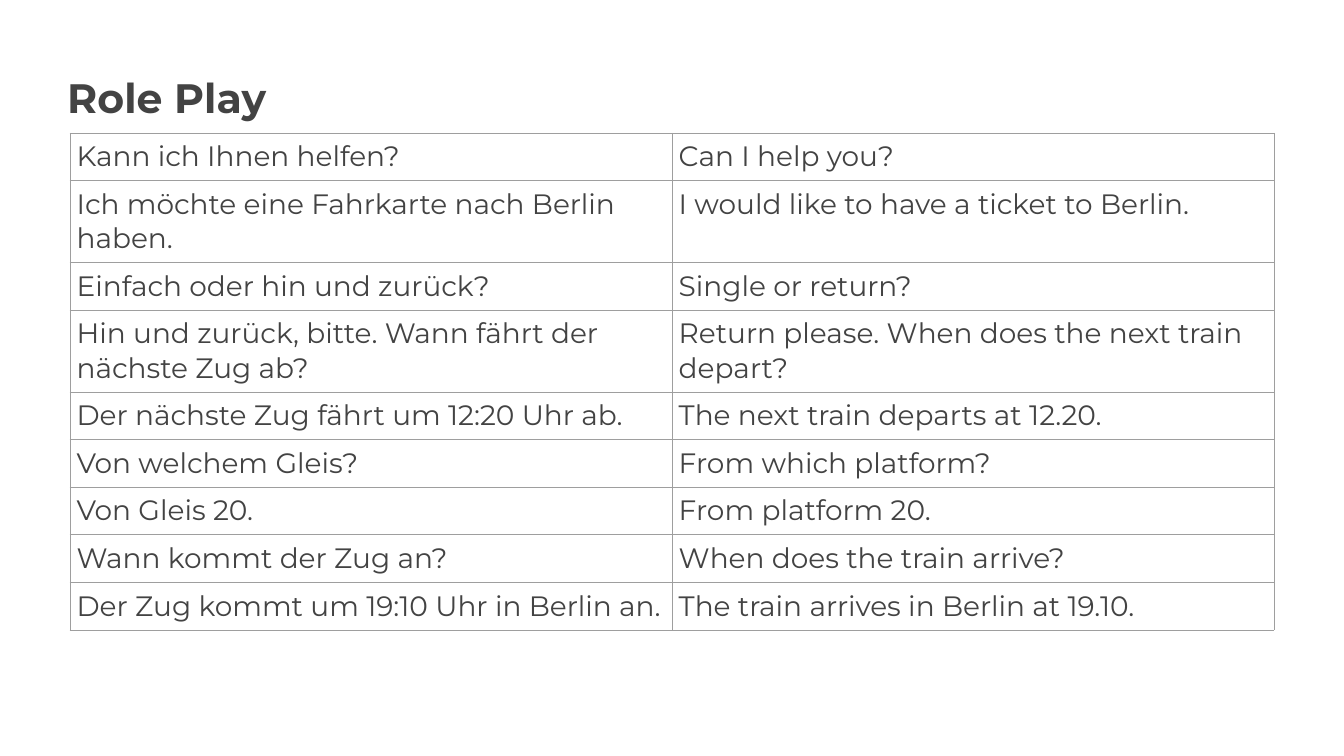
from dataclasses import dataclass

import pptx
import pptx.dml.color
import pptx.enum.text
import pptx.oxml
import pptx.oxml.ns
import pptx.util
from pptx.util import Inches


@dataclass(frozen=True)
class Theme:
    font: str = "Montserrat"
    text: str = "434343"
    border: str = "9E9E9E"
    title_size: int = 44
    cell_size: int = 30
    border_width: float = 0.75


THEME = Theme()

DIALOGUE = [
    ("Kann ich Ihnen helfen?", "Can I help you?"),
    ("Ich möchte eine Fahrkarte nach Berlin haben.", "I would like to have a ticket to Berlin."),
    ("Einfach oder hin und zurück?", "Single or return?"),
    ("Hin und zurück, bitte. Wann fährt der nächste Zug ab?",
     "Return please. When does the next train depart?"),
    ("Der nächste Zug fährt um 12:20 Uhr ab.", "The next train departs at 12.20."),
    ("Von welchem Gleis?", "From which platform?"),
    ("Von Gleis 20.", "From platform 20."),
    ("Wann kommt der Zug an?", "When does the train arrive?"),
    ("Der Zug kommt um 19:10 Uhr in Berlin an.", "The train arrives in Berlin at 19.10."),
]


def set_margins(box, margin):
    box.margin_left = box.margin_right = margin
    box.margin_top = box.margin_bottom = margin


def format_runs(p, size, bold=False):
    for r in p.runs:
        r.font.name = THEME.font
        r.font.size = pptx.util.Pt(size)
        r.font.bold = bold
        r.font.color.rgb = pptx.dml.color.RGBColor.from_string(THEME.text)


def add_title(s, text):
    sp = s.shapes.title
    sp.left, sp.top = Inches(1), Inches(0.97)
    sp.width, sp.height = Inches(14.44), Inches(1.78)
    tf = sp.text_frame
    tf.text = text
    tf.word_wrap = True
    tf.auto_size = pptx.enum.text.MSO_AUTO_SIZE.NONE
    tf.vertical_anchor = pptx.enum.text.MSO_ANCHOR.TOP
    set_margins(tf, 0)
    p = tf.paragraphs[0]
    p.alignment = pptx.enum.text.PP_ALIGN.LEFT
    p.line_spacing = 1.15
    format_runs(p, THEME.title_size, bold=True)


def set_borders(cell):
    tcPr = cell._tc.get_or_add_tcPr()
    width = pptx.util.Pt(THEME.border_width)
    for i, side in enumerate(("lnL", "lnR", "lnT", "lnB")):
        ln = pptx.oxml.parse_xml(
            f'<a:{side} {pptx.oxml.ns.nsdecls("a")} w="{width}">'
            f'<a:solidFill><a:srgbClr val="{THEME.border}"/></a:solidFill></a:{side}>'
        )
        tcPr.insert(i, ln)


def fill_cell(cell, text):
    cell.text_frame.text = text
    cell.fill.background()
    set_margins(cell, Inches(0.1))
    format_runs(cell.text_frame.paragraphs[0], THEME.cell_size)
    set_borders(cell)


def add_dialogue_table(s, rows):
    col_width, row_height = Inches(8.96), Inches(0.42)
    table = s.shapes.add_table(
        len(rows), 2, Inches(1.04), Inches(1.98), col_width * 2, row_height * len(rows)
    ).table
    table.first_row = False
    table.horz_banding = False
    for column in table.columns:
        column.width = col_width
    for i, row in enumerate(rows):
        table.rows[i].height = row_height
        for j, text in enumerate(row):
            fill_cell(table.cell(i, j), text)


def main():
    prs = pptx.Presentation()
    prs.slide_width, prs.slide_height = Inches(20), Inches(11.25)
    s = prs.slides.add_slide(prs.slide_layouts[5])
    add_title(s, "Role Play")
    add_dialogue_table(s, DIALOGUE)
    prs.save("out.pptx")


if __name__ == "__main__":
    main()
